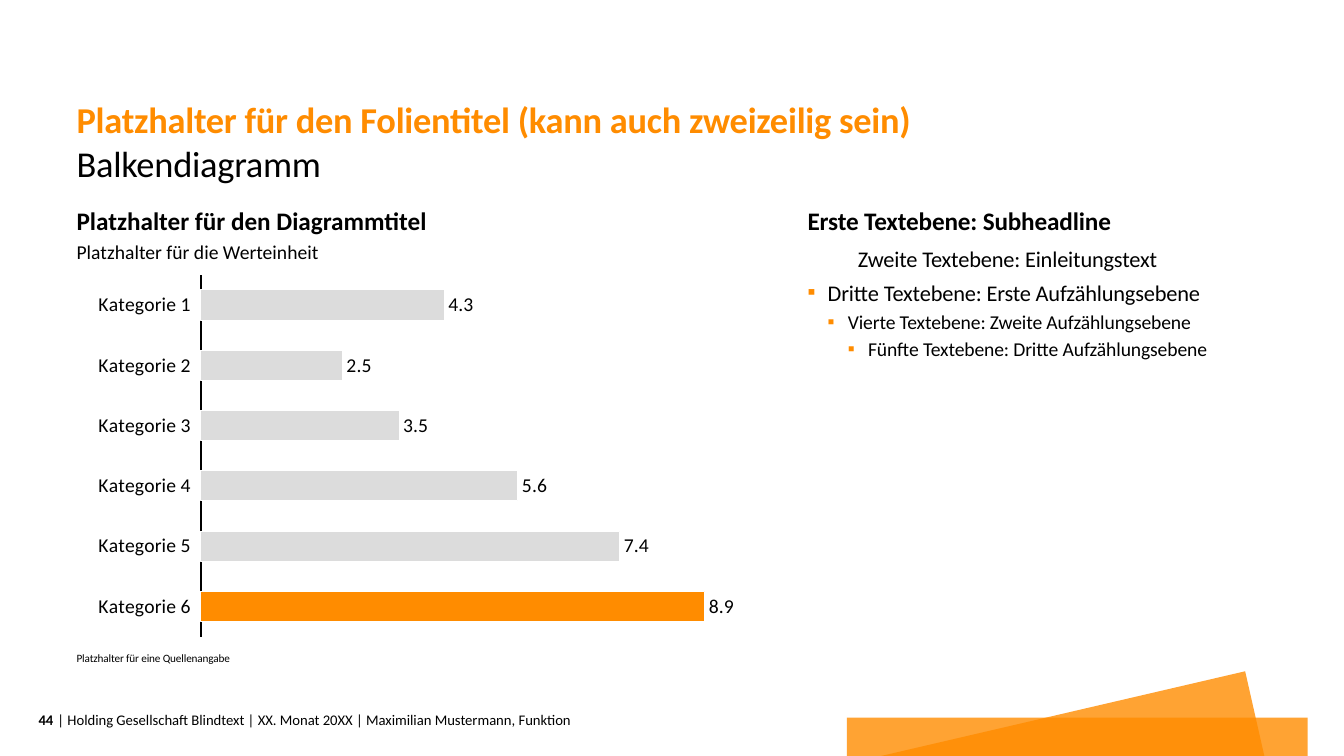
from lxml import etree
from pptx import Presentation
from pptx.chart.data import CategoryChartData
from pptx.dml.color import RGBColor
from pptx.enum.chart import XL_CHART_TYPE as ChartType, XL_LABEL_POSITION as LabelPosition
from pptx.enum.chart import XL_TICK_LABEL_POSITION as TickLabels, XL_TICK_MARK as TickMark
from pptx.enum.shapes import MSO_SHAPE as Shape
from pptx.enum.text import MSO_ANCHOR as Anchor, MSO_AUTO_SIZE as AutoSize, PP_ALIGN as Align
from pptx.oxml import parse_xml
from pptx.oxml.ns import nsdecls, qn
from pptx.util import Inches, Pt

FONT = "Calibri"
COLORS = {"accent": "FF8C00", "text": "000000", "bar": "DCDCDC", "white": "FFFFFF"}
LEFT = 0.76
CHART_WIDTH = 6.85
TITLE_WIDTH = 10.71
INDENT = 0.2


def color(name):
    return RGBColor.from_string(COLORS[name])


def style_font(font, size, name="text", bold=False):
    font.name, font.size, font.bold = FONT, Pt(size), bold
    font.color.rgb = color(name)


def prepare_frame(shape, anchor=Anchor.TOP):
    frame = shape.text_frame
    frame.auto_size = AutoSize.NONE
    frame.word_wrap = True
    frame.vertical_anchor = anchor
    frame.margin_left = frame.margin_right = frame.margin_top = frame.margin_bottom = 0
    return frame


def add_bullet(para, left):
    props = para._p.get_or_add_pPr()
    props.set("marL", str(Inches(left)))
    props.set("indent", str(-Inches(INDENT)))
    bullet_color = etree.SubElement(props, qn("a:buClr"))
    etree.SubElement(bullet_color, qn("a:srgbClr"), val=COLORS["accent"])
    etree.SubElement(props, qn("a:buFont"), typeface=FONT)
    etree.SubElement(props, qn("a:buChar"), char="▪")


def write(para, text, size=14, name="text", bold=False, align=Align.LEFT,
          line=1.0, before=0, spacing=0, level=0, bullet_left=None):
    """Fill a paragraph with one formatted run."""
    para.level = level
    if bullet_left is not None:
        add_bullet(para, bullet_left)
    para.alignment = align
    para.line_spacing = line
    para.space_before = Pt(before)
    span = para.add_run()
    span.text = text
    style_font(span.font, size, name, bold)
    if spacing:
        span._r.get_or_add_rPr().set("spc", str(round(spacing * 100)))


def add_text(page, box, text, anchor=Anchor.TOP, **look):
    shape = page.shapes.add_textbox(*map(Inches, box))
    write(prepare_frame(shape, anchor).paragraphs[0], text, **look)


def add_decoration(page, left, top, width, height):
    """Place the two overlapping translucent shapes at the bottom edge."""
    bar_top = top + 0.46
    bar = page.shapes.add_shape(Shape.RECTANGLE, Inches(left), Inches(bar_top),
                                Inches(width), Inches(top + height - bar_top))
    bottom = top + height
    corners = [(left + 4.14, bottom), (left + 3.95, top), (left + 0.34, bottom)]
    points = [(Inches(x), Inches(y)) for x, y in corners]
    builder = page.shapes.build_freeform(*points[0])
    builder.add_line_segments(points[1:], close=True)
    wedge = builder.convert_to_shape()
    for shape in (bar, wedge):
        shape.shadow.inherit = False
        shape.fill.solid()
        shape.fill.fore_color.rgb = color("accent")
        shape.line.fill.background()
        tint = shape._element.spPr.find(qn("a:solidFill")).find(qn("a:srgbClr"))
        etree.SubElement(tint, qn("a:alpha"), val="80000")


def add_heading(page, left, top, width):
    title = page.shapes.title
    title.left, title.top, title.width, title.height = map(Inches, (left, top, width, 0.42))
    write(prepare_frame(title, Anchor.BOTTOM).paragraphs[0],
          "Platzhalter für den Folientitel (kann auch zweizeilig sein)",
          size=26, name="accent", bold=True, line=0.95, spacing=-0.2)
    add_text(page, (left, top + 0.44, width, 0.42), "Balkendiagramm",
             size=26, line=0.95, spacing=-0.2)


def set_plot_area(chart, x, y, w, h):
    """Fix the inner plot area as fractions of the chart."""
    plot_area = chart._chartSpace.chart.plotArea
    for layout in plot_area.findall(qn("c:layout")):
        plot_area.remove(layout)
    places = "".join(f'<c:{key} val="{value}"/>' for key, value in
                     (("x", x), ("y", y), ("w", w), ("h", h)))
    plot_area.insert(0, parse_xml(
        f'<c:layout {nsdecls("c")}><c:manualLayout><c:layoutTarget val="inner"/>'
        f'<c:xMode val="edge"/><c:yMode val="edge"/>{places}</c:manualLayout></c:layout>'))


def add_bar_chart(page, box):
    values = [4.3, 2.5, 3.5, 5.6, 7.4, 8.9]
    data = CategoryChartData(number_format="0.0")
    data.categories = [f"Kategorie {number}" for number in range(1, len(values) + 1)]
    data.add_series("Series 1", values)
    chart = page.shapes.add_chart(ChartType.BAR_CLUSTERED, *map(Inches, box), data).chart
    chart.has_legend = chart.has_title = False
    style_font(chart.font, 14)
    set_plot_area(chart, 0.18, 0.01, 0.82, 0.97)

    categories = chart.category_axis
    categories.reverse_order = True
    categories.major_tick_mark = categories.minor_tick_mark = TickMark.NONE
    categories.tick_label_position = TickLabels.LOW
    categories.has_major_gridlines = False
    categories.format.line.color.rgb = color("text")
    categories.format.line.width = Pt(1)

    scale = chart.value_axis
    scale.minimum_scale, scale.maximum_scale, scale.major_unit = 0, 10, 2
    scale.has_major_gridlines = False
    scale.visible = False

    plot = chart.plots[0]
    plot.gap_width = 100
    plot.vary_by_categories = False
    series = plot.series[0]
    series.invert_if_negative = False
    highlight = series.points[len(values) - 1]
    for part, name in ((series, "bar"), (highlight, "accent")):
        part.format.fill.solid()
        part.format.fill.fore_color.rgb = color(name)
        part.format.line.color.rgb = color("white")
        part.format.line.width = Pt(0.75)

    labels = series.data_labels
    labels.show_value = True
    labels.number_format, labels.number_format_is_linked = "0.0", False
    labels.position = LabelPosition.OUTSIDE_END
    style_font(labels.font, 14)


def add_chart_region(page, left, top, width):
    add_text(page, (left, top, width, 0.31), "Platzhalter für den Diagrammtitel",
             size=18, bold=True, line=1.05)
    add_text(page, (left, top + 0.35, width, 0.24), "Platzhalter für die Werteinheit",
             line=1.05)
    add_bar_chart(page, (left, top + 0.67, width, 3.7))
    add_text(page, (left, top + 4.43, width, 0.14), "Platzhalter für eine Quellenangabe",
             anchor=Anchor.BOTTOM, size=8, line=1.05, spacing=-0.1)


def add_text_levels(page, box):
    frame = prepare_frame(page.shapes.add_textbox(*map(Inches, box)))
    levels = [
        ("Erste Textebene: Subheadline", 18, 0),
        ("Zweite Textebene: Einleitungstext", 16, 6),
        ("Dritte Textebene: Erste Aufzählungsebene", 16, 4),
        ("Vierte Textebene: Zweite Aufzählungsebene", 14, 2),
        ("Fünfte Textebene: Dritte Aufzählungsebene", 14, 2),
    ]
    for level, (text, size, before) in enumerate(levels):
        para = frame.add_paragraph() if level else frame.paragraphs[0]
        bullet_left = INDENT * (level - 1) if level > 1 else None
        write(para, text, size=size, bold=level == 0, line=1.05, before=before,
              spacing=-0.1, level=level, bullet_left=bullet_left)


def add_footer(page, left, top):
    add_text(page, (left, top, 0.31, 0.18), "44", anchor=Anchor.MIDDLE,
             size=10.5, bold=True, align=Align.RIGHT)
    add_text(page, (left + 0.35, top, 7.09, 0.18),
             "| Holding Gesellschaft Blindtext | XX. Monat 20XX | Maximilian Mustermann, Funktion",
             anchor=Anchor.MIDDLE, size=10.5)


def main():
    deck = Presentation()
    deck.slide_width, deck.slide_height = Inches(13.33), Inches(7.5)
    page = deck.slides.add_slide(deck.slide_layouts[5])
    add_decoration(page, 8.4, 6.66, 4.57, 0.84)
    add_heading(page, LEFT, 0.99, TITLE_WIDTH)
    add_chart_region(page, LEFT, 2.02, CHART_WIDTH)
    add_text_levels(page, (8.01, 2.02, 4.96, 4.57))
    add_footer(page, 0.22, 7.05)
    deck.save("out.pptx")


if __name__ == "__main__":
    main()
